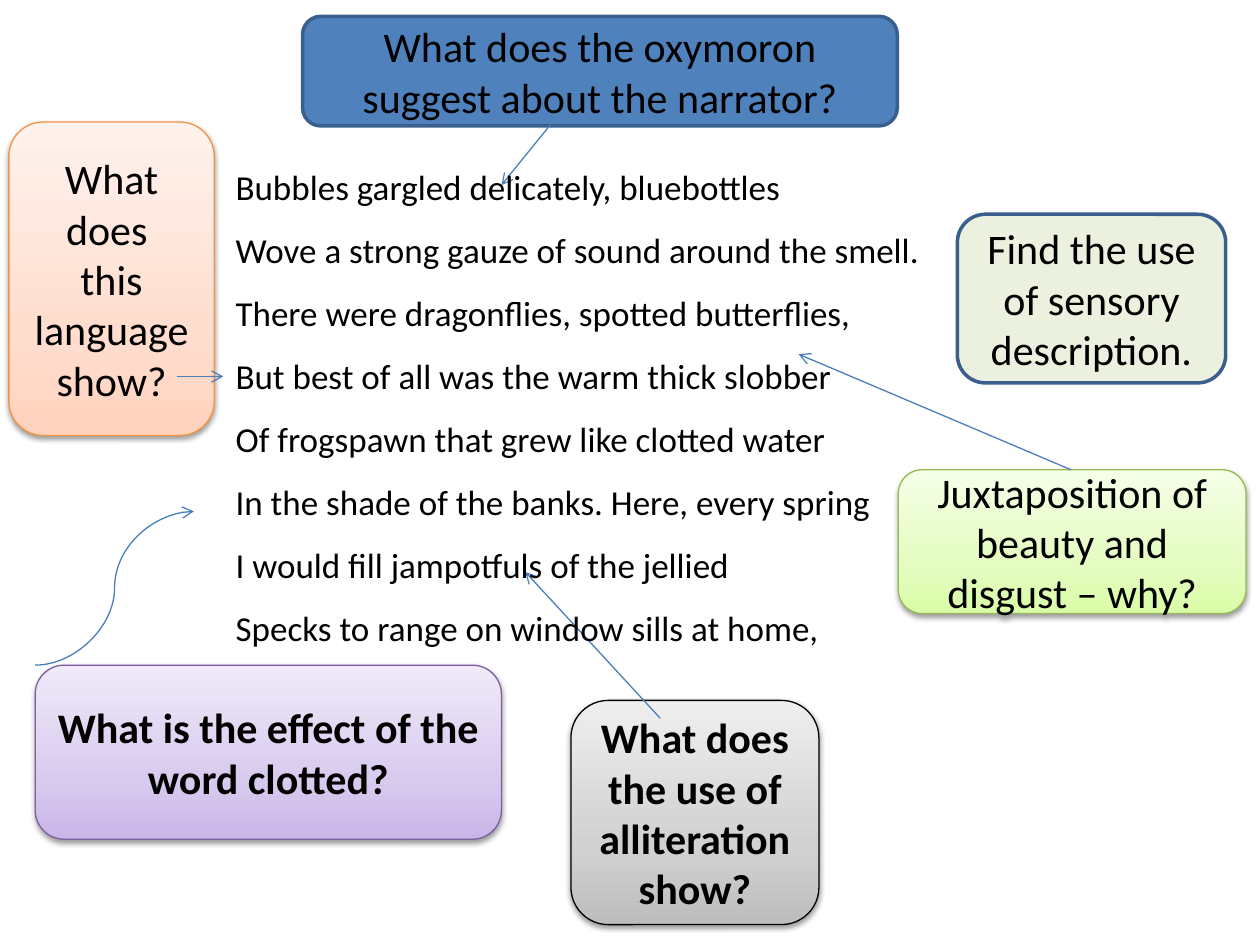
from lxml.etree import SubElement
from pptx import Presentation
from pptx.dml.color import RGBColor
from pptx.enum.shapes import MSO_CONNECTOR, MSO_SHAPE
from pptx.enum.text import MSO_ANCHOR, MSO_AUTO_SIZE, PP_ALIGN
from pptx.oxml.ns import qn
from pptx.util import Cm, Pt

THEME = {
    "font": "Calibri", "ink": "000000", "ask": 24, "verse": 20,
    "arrow": "4B7EBC", "thin": 0.75, "thick": 2, "stops": (0, 35, 100),
    "blue": (["4F81BD"], "3A5F8C"),
    "sage": (["EBF1DE"], "3A5F8C"),
    "peach": (["FFD2BD", "FFDED0", "FFF2ED"], "F69240"),
    "lime": (["DAFDA7", "E4FCC2", "F5FFE7"], "98B955"),
    "lilac": (["C9B5E8", "D8CBEE", "F0EAF9"], "7D60A0"),
    "grey": (["BDBDBD", "D1D1D1", "EEEEEE"], "000000"),
}

ASKS = [
    ("What does the oxymoron suggest about the narrator?", "blue", False, (6.1, 0.33, 11.99, 2.21)),
    ("Find the use of sensory description.", "sage", False, (19.3, 4.32, 5.41, 3.4)),
    ("What does  this language show?", "peach", False, (0.18, 2.46, 4.14, 6.32)),
    ("Juxtaposition of beauty and disgust – why?", "lime", False, (18.11, 9.47, 7.01, 2.9)),
    ("What is the effect of the word clotted?", "lilac", True, (0.71, 13.41, 9.4, 3.51)),
    ("What does the use of alliteration show?", "grey", True, (11.51, 14.12, 5, 4.52)),
]

ARROWS = [
    (MSO_CONNECTOR.STRAIGHT, (11.1, 2.51, 10.11, 3.73)),
    (MSO_CONNECTOR.STRAIGHT, (3.56, 7.59, 4.5, 7.59)),
    (MSO_CONNECTOR.STRAIGHT, (21.59, 9.47, 16.1, 7.14)),
    (MSO_CONNECTOR.CURVE, (0.71, 13.41, 3.91, 10.31)),
    (MSO_CONNECTOR.STRAIGHT, (13.31, 14.48, 10.59, 11.53)),
]

VERSE = [
    "Bubbles gargled delicately, bluebottles",
    "Wove a strong gauze of sound around the smell.",
    "There were dragonflies, spotted butterflies,",
    "But best of all was the warm thick slobber",
    "Of frogspawn that grew like clotted water",
    "In the shade of the banks. Here, every spring",
    "I would fill jampotfuls of the jellied",
    "Specks to range on window sills at home,",
]
VERSE_AT = (4.5, 2.79, 14.38, 10.52)


def color(code):
    return RGBColor.from_string(code)


def place(spot):
    return [Cm(n) for n in spot]


def write(para, text, size, bold=False):
    run = para.add_run()
    run.text = text
    run.font.name = THEME["font"]
    run.font.size = Pt(size)
    run.font.bold = bold
    run.font.color.rgb = color(THEME["ink"])


def stroke(line, code, width):
    line.color.rgb = color(code)
    line.width = Pt(width)


def shade(box, tones):
    box.fill.gradient()
    box.fill.gradient_angle = 90
    stops = box._element.spPr.find(".//" + qn("a:gsLst"))
    for old in list(stops):
        stops.remove(old)
    for pos, tone in zip(THEME["stops"], tones):
        stop = SubElement(stops, qn("a:gs"), pos=str(pos * 1000))
        SubElement(stop, qn("a:srgbClr"), val=tone)


def drop(box):
    group = box._element.spPr.find(qn("a:effectLst"))
    cast = SubElement(group, qn("a:outerShdw"), blurRad="40000", dist="20000",
                      dir="5400000", rotWithShape="0")
    tint = SubElement(cast, qn("a:srgbClr"), val="000000")
    SubElement(tint, qn("a:alpha"), val="38000")


def add_ask(slide, text, style, bold, spot):
    tones, edge = THEME[style]
    soft = len(tones) > 1
    box = slide.shapes.add_shape(MSO_SHAPE.ROUNDED_RECTANGLE, *place(spot))
    box.shadow.inherit = False
    if soft:
        shade(box, tones)
        drop(box)
    else:
        box.fill.solid()
        box.fill.fore_color.rgb = color(tones[0])
    stroke(box.line, edge, THEME["thin" if soft else "thick"])
    frame = box.text_frame
    frame.word_wrap = True
    frame.vertical_anchor = MSO_ANCHOR.MIDDLE
    para = frame.paragraphs[0]
    para.alignment = PP_ALIGN.CENTER
    write(para, text, THEME["ask"], bold)


def add_arrow(slide, kind, ends):
    link = slide.shapes.add_connector(kind, *place(ends))
    stroke(link.line, THEME["arrow"], THEME["thin"])
    SubElement(link.line._get_or_add_ln(), qn("a:tailEnd"), type="arrow")
    SubElement(link._element.spPr, qn("a:effectLst"))


def add_verse(slide):
    frame = slide.shapes.add_textbox(*place(VERSE_AT)).text_frame
    frame.word_wrap = True
    frame.auto_size = MSO_AUTO_SIZE.SHAPE_TO_FIT_TEXT
    for i, text in enumerate(VERSE):
        para = frame.add_paragraph() if i else frame.paragraphs[0]
        para.line_spacing = 1.5
        write(para, text, THEME["verse"])


def main():
    deck = Presentation()
    deck.slide_width, deck.slide_height = Cm(25.4), Cm(19.05)
    slide = deck.slides.add_slide(deck.slide_layouts[6])
    for ask in ASKS:
        add_ask(slide, *ask)
    for arrow in ARROWS:
        add_arrow(slide, *arrow)
    add_verse(slide)
    deck.save("out.pptx")


if __name__ == "__main__":
    main()
